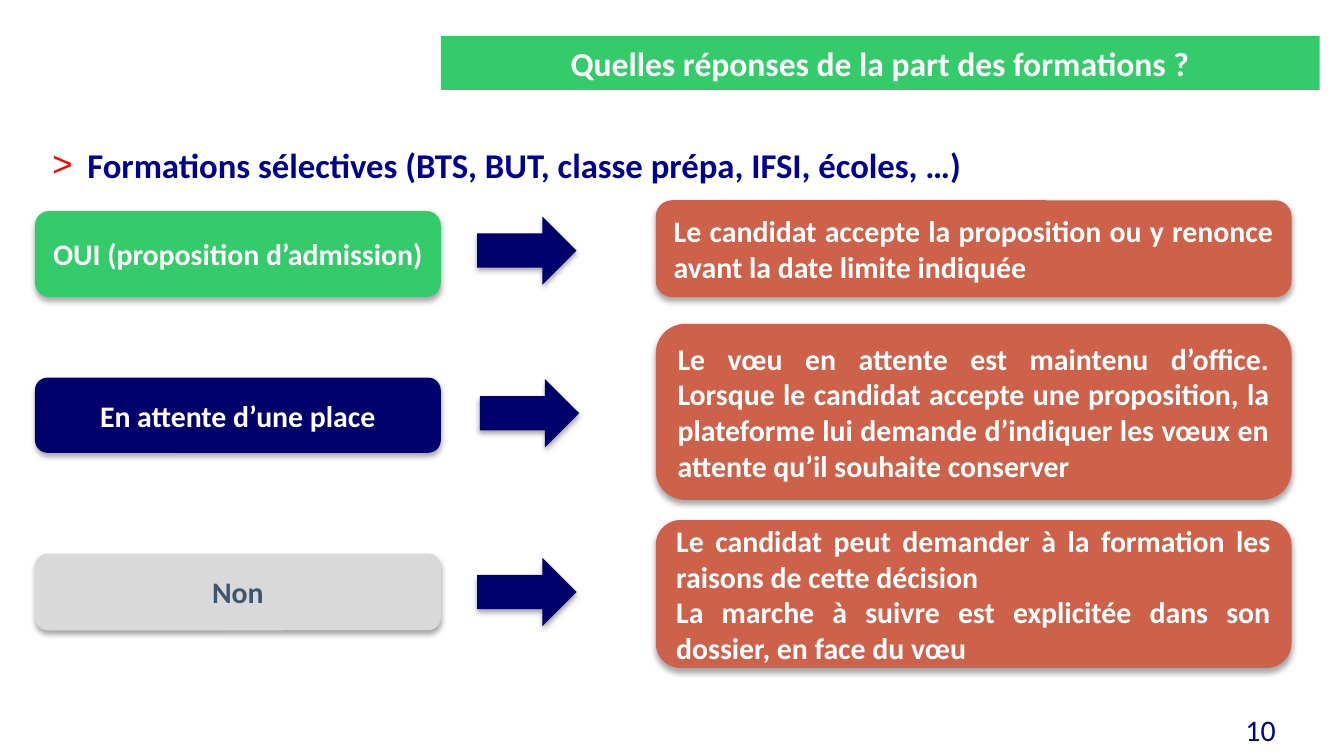
from pptx import Presentation
from pptx.dml.color import RGBColor
from pptx.enum.shapes import MSO_SHAPE
from pptx.enum.text import MSO_ANCHOR, PP_ALIGN
from pptx.oxml import parse_xml
from pptx.oxml.ns import nsdecls
from pptx.util import Inches, Pt

GREEN, NAVY, BLUE = "34CB6A", "00006D", "000091"
RUST, GREY, SLATE, WHITE = "CE614A", "D9D9D9", "3D566E", "FFFFFF"

TITLE = "Quelles réponses de la part des formations ?"
HEAD = "Formations sélectives (BTS, BUT, classe prépa, IFSI, écoles, …)"
PAGE = "10"

ROWS = [
    {"label": "OUI (proposition d’admission)", "fill": GREEN, "ink": WHITE,
     "left": (1.57, 0.64), "arrow": (3.55, 1.61), "right": (1.49, 0.72),
     "reply": ["Le candidat accepte la proposition ou y renonce "
               "avant la date limite indiquée"]},
    {"label": "En attente d’une place", "fill": NAVY, "ink": WHITE,
     "left": (2.81, 0.56), "arrow": (3.57, 2.82), "right": (2.41, 1.31),
     "reply": ["Le vœu en attente est maintenu d’office. Lorsque le candidat "
               "accepte une proposition, la plateforme lui demande d’indiquer "
               "les vœux en attente qu’il souhaite conserver"]},
    {"label": "Non", "fill": GREY, "ink": SLATE,
     "left": (4.12, 0.57), "arrow": (3.55, 4.15), "right": (3.87, 1.1),
     "reply": ["Le candidat peut demander à la formation les raisons "
               "de cette décision",
               "La marche à suivre est explicitée dans son dossier, "
               "en face du vœu"]},
]

deck = Presentation()
deck.slide_width = Inches(10)
deck.slide_height = deck.slide_width * 9 // 16
slide = deck.slides.add_slide(deck.slide_layouts[6])


def color(code):
    return RGBColor.from_string(code)


def write(shape, lines, size=16, ink=WHITE, bold=True, align=PP_ALIGN.CENTER):
    frame = shape.text_frame
    frame.word_wrap = True
    frame.vertical_anchor = MSO_ANCHOR.MIDDLE
    for i, line in enumerate(lines):
        para = frame.paragraphs[0] if i == 0 else frame.add_paragraph()
        para.alignment = align
        run = para.add_run()
        run.text = line
        run.font.name, run.font.size, run.font.bold = "Calibri", Pt(size), bold
        run.font.color.rgb = color(ink)


def draw(kind, x, y, w, h, fill, shade=True):
    shape = slide.shapes.add_shape(kind, Inches(x), Inches(y), Inches(w), Inches(h))
    shape.fill.solid()
    shape.fill.fore_color.rgb = color(fill)
    shape.line.fill.background()
    shape.shadow.inherit = False
    if shade:
        shape.element.spPr.effectLst.append(parse_xml(
            f'<a:outerShdw {nsdecls("a")} blurRad="{Pt(3.1)}" dist="{Pt(1.8)}" '
            'dir="5400000" rotWithShape="0"><a:srgbClr val="000000">'
            '<a:alpha val="35000"/></a:srgbClr></a:outerShdw>'))
    return shape


def place(x, y, w, h):
    return slide.shapes.add_textbox(Inches(x), Inches(y), Inches(w), Inches(h))


def bullet(para, mark, ink, indent):
    props = para._p.get_or_add_pPr()
    props.set("marL", str(Inches(indent)))
    props.set("indent", str(-Inches(indent)))
    for body in (f'buClr {nsdecls("a")}><a:srgbClr val="{ink}"/></a:buClr>',
                 f'buFont {nsdecls("a")} typeface="Arial"/>',
                 f'buChar {nsdecls("a")} char="{mark}"/>'):
        props.append(parse_xml("<a:" + body))


title = draw(MSO_SHAPE.RECTANGLE, 3.28, 0.27, 6.54, 0.4, GREEN, shade=False)
write(title, [TITLE], size=18)

head = place(0.26, 1, 8.11, 0.45)
head.text_frame.margin_left = head.text_frame.margin_right = Inches(0.13)
bullet(head.text_frame.paragraphs[0], "&gt;", "FF0000", 0.26)
write(head, [HEAD], size=18.6, ink=BLUE, align=PP_ALIGN.LEFT)

for row in ROWS:
    top, high = row["left"]
    label = draw(MSO_SHAPE.ROUNDED_RECTANGLE, 0.26, top, 3.02, high, row["fill"])
    write(label, [row["label"]], ink=row["ink"])
    draw(MSO_SHAPE.RIGHT_ARROW, *row["arrow"], 0.74, 0.51, NAVY)
    top, high = row["right"]
    reply = draw(MSO_SHAPE.ROUNDED_RECTANGLE, 4.88, top, 4.73, high, RUST)
    write(reply, row["reply"], align=PP_ALIGN.JUSTIFY)

page = place(8.31, 5.23, 1.28, 0.39)
write(page, [PAGE], ink=BLUE, bold=False, align=PP_ALIGN.RIGHT)

deck.save("out.pptx")
